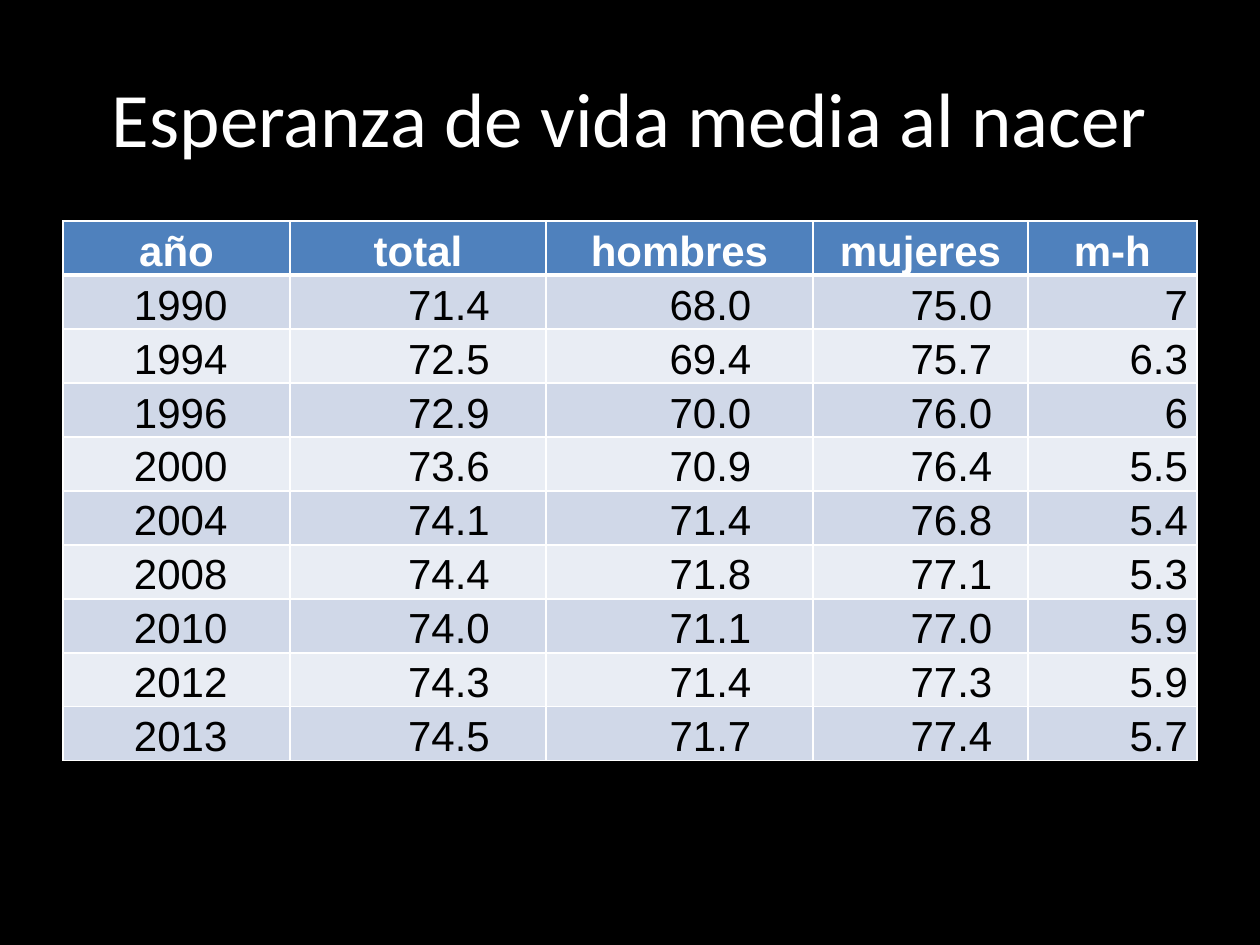
import pptx
import pptx.dml.color
import pptx.enum.text
import pptx.oxml.ns
import pptx.util
from lxml import etree

ALIGN = pptx.enum.text.PP_ALIGN
ANCHOR = pptx.enum.text.MSO_ANCHOR
WHITE, BLACK, BLUE = "FFFFFF", "000000", "4F81BD"
BANDS = ("D0D8E8", "E9EDF4")
COL_WIDTHS = (227, 256, 267, 215, 169)
HEADER_HEIGHT, ROW_HEIGHT = 53, 44
LINE_SPACING = pptx.util.Pt(30.8)
INDENT, INSET = 62, 9
HEADERS = ("año", "total", "hombres", "mujeres", "m-h")
ROWS = (
    ("1990", "71.4", "68.0", "75.0", "7"),
    ("1994", "72.5", "69.4", "75.7", "6.3"),
    ("1996", "72.9", "70.0", "76.0", "6"),
    ("2000", "73.6", "70.9", "76.4", "5.5"),
    ("2004", "74.1", "71.4", "76.8", "5.4"),
    ("2008", "74.4", "71.8", "77.1", "5.3"),
    ("2010", "74.0", "71.1", "77.0", "5.9"),
    ("2012", "74.3", "71.4", "77.3", "5.9"),
    ("2013", "74.5", "71.7", "77.4", "5.7"),
)
BODY_ALIGN = (ALIGN.LEFT, ALIGN.CENTER, ALIGN.CENTER, ALIGN.CENTER, ALIGN.RIGHT)


def px(n):
    """Turn pixels into EMU."""
    return pptx.util.Inches(n / 126)


def paint(fill, color):
    """Fill with a solid hex colour."""
    fill.solid()
    fill.fore_color.rgb = pptx.dml.color.RGBColor.from_string(color)


def add_run(p, text, font, size, color, bold=False):
    """Add one formatted run to a paragraph."""
    r = p.add_run()
    r.text = text
    r.font.name = font
    r.font.size = pptx.util.Pt(size)
    r.font.bold = bold
    paint(r.font.fill, color)


def set_borders(cell, top, bottom):
    """Draw white cell borders, with top and bottom widths in points."""
    tc_pr = cell._tc.get_or_add_tcPr()
    for side, width in (("L", 1), ("R", 1), ("T", top), ("B", bottom)):
        ln = etree.SubElement(tc_pr, pptx.oxml.ns.qn(f"a:ln{side}"), w=str(pptx.util.Pt(width)))
        fill = etree.SubElement(ln, pptx.oxml.ns.qn("a:solidFill"))
        etree.SubElement(fill, pptx.oxml.ns.qn("a:srgbClr"), val=WHITE)


def add_title(s, x, y, w, h):
    """Place the centred title in its box."""
    sp = s.shapes.add_textbox(px(x), px(y), px(w), px(h))
    tf = sp.text_frame
    tf.word_wrap = True
    tf.vertical_anchor = ANCHOR.MIDDLE
    p = tf.paragraphs[0]
    p.alignment = ALIGN.CENTER
    add_run(p, "Esperanza de vida media al nacer", "Calibri", 44, WHITE)


def fill_cell(cell, text, row, col):
    """Format and fill one cell according to its row and column."""
    header = row == 0
    set_borders(cell, 3 if row == 1 else 1, 3 if header else 1)
    paint(cell.fill, BLUE if header else BANDS[(row - 1) % 2])
    cell.margin_left = cell.margin_right = px(INSET)
    cell.margin_top = cell.margin_bottom = 0
    p = cell.text_frame.paragraphs[0]
    p.alignment = ALIGN.CENTER if header else BODY_ALIGN[col]
    p.line_spacing = LINE_SPACING
    if not header and col < len(HEADERS) - 1:
        p._p.get_or_add_pPr().set("indent", str(px(INDENT)))
    add_run(p, text, "Arial", 24, WHITE if header else BLACK, header)


def add_life_table(s, x, y):
    """Place the life expectancy table with its top left corner at x, y."""
    data = (HEADERS,) + ROWS
    heights = [HEADER_HEIGHT] + [ROW_HEIGHT] * len(ROWS)
    table = s.shapes.add_table(
        len(data), len(HEADERS), px(x), px(y), px(sum(COL_WIDTHS)), px(sum(heights))
    ).table
    for column, width in zip(table.columns, COL_WIDTHS):
        column.width = px(width)
    for i, (values, height) in enumerate(zip(data, heights)):
        table.rows[i].height = px(height)
        for j, text in enumerate(values):
            fill_cell(table.cell(i, j), text, i, j)


def main():
    """Build and save the slide."""
    prs = pptx.Presentation()
    prs.slide_width, prs.slide_height = px(1260), px(945)
    s = prs.slides.add_slide(prs.slide_layouts[6])
    paint(s.background.fill, BLACK)
    add_title(s, 63, 38, 1134, 158)
    add_life_table(s, 63, 221)
    prs.save("out.pptx")


if __name__ == "__main__":
    main()
